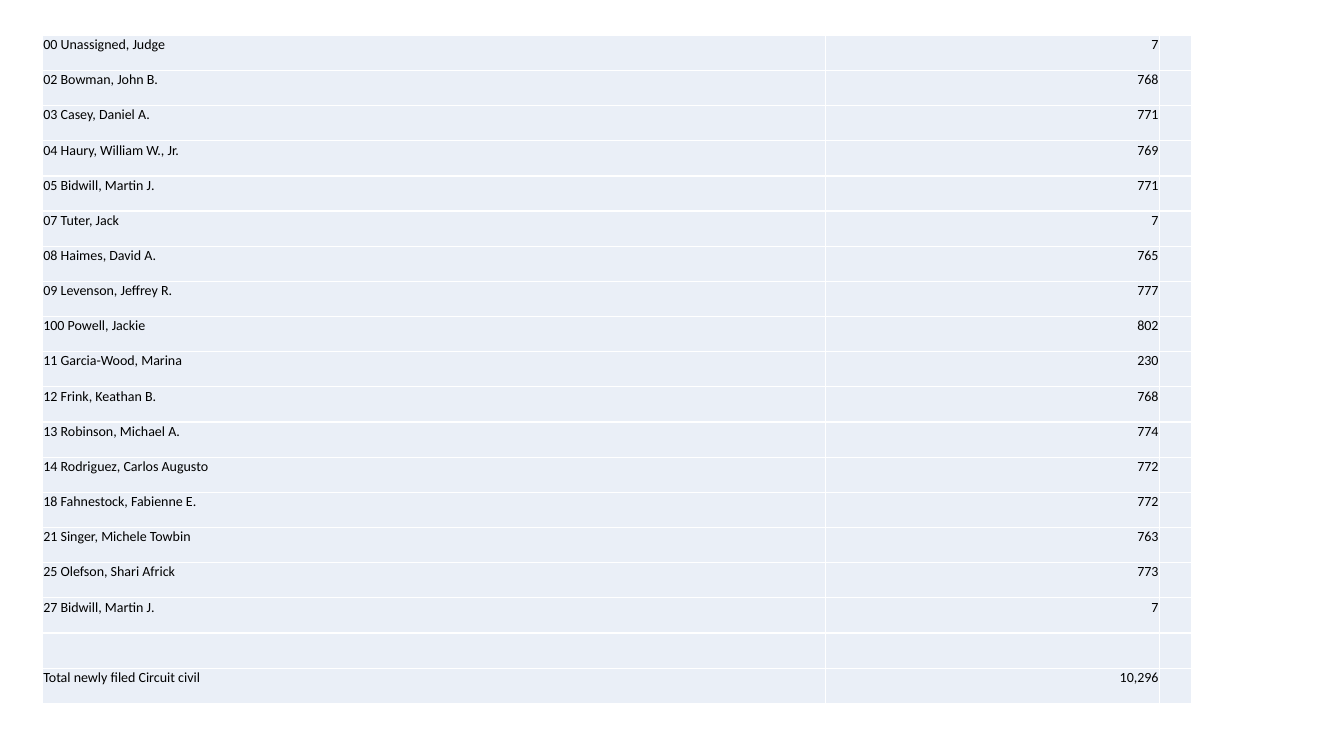
"""Build a slide with a table of newly filed circuit civil cases per judge."""
import dataclasses

import lxml.etree
import pptx
import pptx.dml.color
import pptx.enum.text
import pptx.oxml.ns
import pptx.table
import pptx.util

Inches = pptx.util.Inches
ALIGN = pptx.enum.text.PP_ALIGN
COLORS = {"text": "000000", "cell": "EAEFF7", "border": "FFFFFF"}
COLUMN_WIDTHS = (7.77, 3.31, 0.32)
TABLE_HEIGHT = 6.63


@dataclasses.dataclass(frozen=True)
class CaseRow:
    """One row of the case table."""
    label: str = ""
    count: str = ""


CASE_ROWS = [
    CaseRow("00 Unassigned, Judge", "7"),
    CaseRow("02 Bowman, John B.", "768"),
    CaseRow("03 Casey, Daniel A.", "771"),
    CaseRow("04 Haury, William W., Jr.", "769"),
    CaseRow("05 Bidwill, Martin J.", "771"),
    CaseRow("07 Tuter, Jack", "7"),
    CaseRow("08 Haimes, David A.", "765"),
    CaseRow("09 Levenson, Jeffrey R.", "777"),
    CaseRow("100 Powell, Jackie", "802"),
    CaseRow("11 Garcia-Wood, Marina", "230"),
    CaseRow("12 Frink, Keathan B.", "768"),
    CaseRow("13 Robinson, Michael A.", "774"),
    CaseRow("14 Rodriguez, Carlos Augusto", "772"),
    CaseRow("18 Fahnestock, Fabienne E.", "772"),
    CaseRow("21 Singer, Michele Towbin", "763"),
    CaseRow("25 Olefson, Shari Africk", "773"),
    CaseRow("27 Bidwill, Martin J.", "7"),
    CaseRow(),
    CaseRow("Total newly filed Circuit civil", "10,296"),
]


def rgb(name: str) -> pptx.dml.color.RGBColor:
    """Return the named colour."""
    return pptx.dml.color.RGBColor.from_string(COLORS[name])


def write_text(cell: pptx.table._Cell, text: str, *, size: float = 10, font: str = "Calibri",
               color: str = "text", align: ALIGN = ALIGN.LEFT) -> None:
    """Write formatted text into a cell."""
    paragraph = cell.text_frame.paragraphs[0]
    paragraph.alignment = align
    run = paragraph.add_run()
    run.text = text
    run.font.size = pptx.util.Pt(size)
    run.font.name = font
    run.font.color.rgb = rgb(color)


def add_borders(cell: pptx.table._Cell, color: str = "border", width: float = 1) -> None:
    """Draw a solid line on each side of a cell."""
    properties = cell._tc.get_or_add_tcPr()
    for position, side in enumerate(("a:lnL", "a:lnR", "a:lnT", "a:lnB")):
        line = lxml.etree.Element(pptx.oxml.ns.qn(side), w=str(pptx.util.Pt(width)))
        fill = lxml.etree.SubElement(line, pptx.oxml.ns.qn("a:solidFill"))
        lxml.etree.SubElement(fill, pptx.oxml.ns.qn("a:srgbClr"), val=COLORS[color])
        properties.insert(position, line)


def format_cell(cell: pptx.table._Cell) -> None:
    """Give a cell its margins, fill and borders."""
    cell.margin_left = cell.margin_right = cell.margin_top = Inches(0.01)
    cell.margin_bottom = 0
    cell.fill.solid()
    cell.fill.fore_color.rgb = rgb("cell")
    add_borders(cell)


def main() -> None:
    """Build and save the presentation."""
    presentation = pptx.Presentation()
    presentation.slide_width = Inches(13.33)
    presentation.slide_height = Inches(7.5)
    slide = presentation.slides.add_slide(presentation.slide_layouts[6])
    table = slide.shapes.add_table(
        len(CASE_ROWS), len(COLUMN_WIDTHS), Inches(0.42), Inches(0.35),
        Inches(sum(COLUMN_WIDTHS)), Inches(TABLE_HEIGHT)).table
    table.first_row = table.horz_banding = False
    for column, width in zip(table.columns, COLUMN_WIDTHS):
        column.width = Inches(width)
    for cell in table.iter_cells():
        format_cell(cell)
    for index, case_row in enumerate(CASE_ROWS):
        if case_row.label:
            write_text(table.cell(index, 0), case_row.label)
            write_text(table.cell(index, 1), case_row.count, align=ALIGN.RIGHT)
    presentation.save("out.pptx")


if __name__ == "__main__":
    main()
